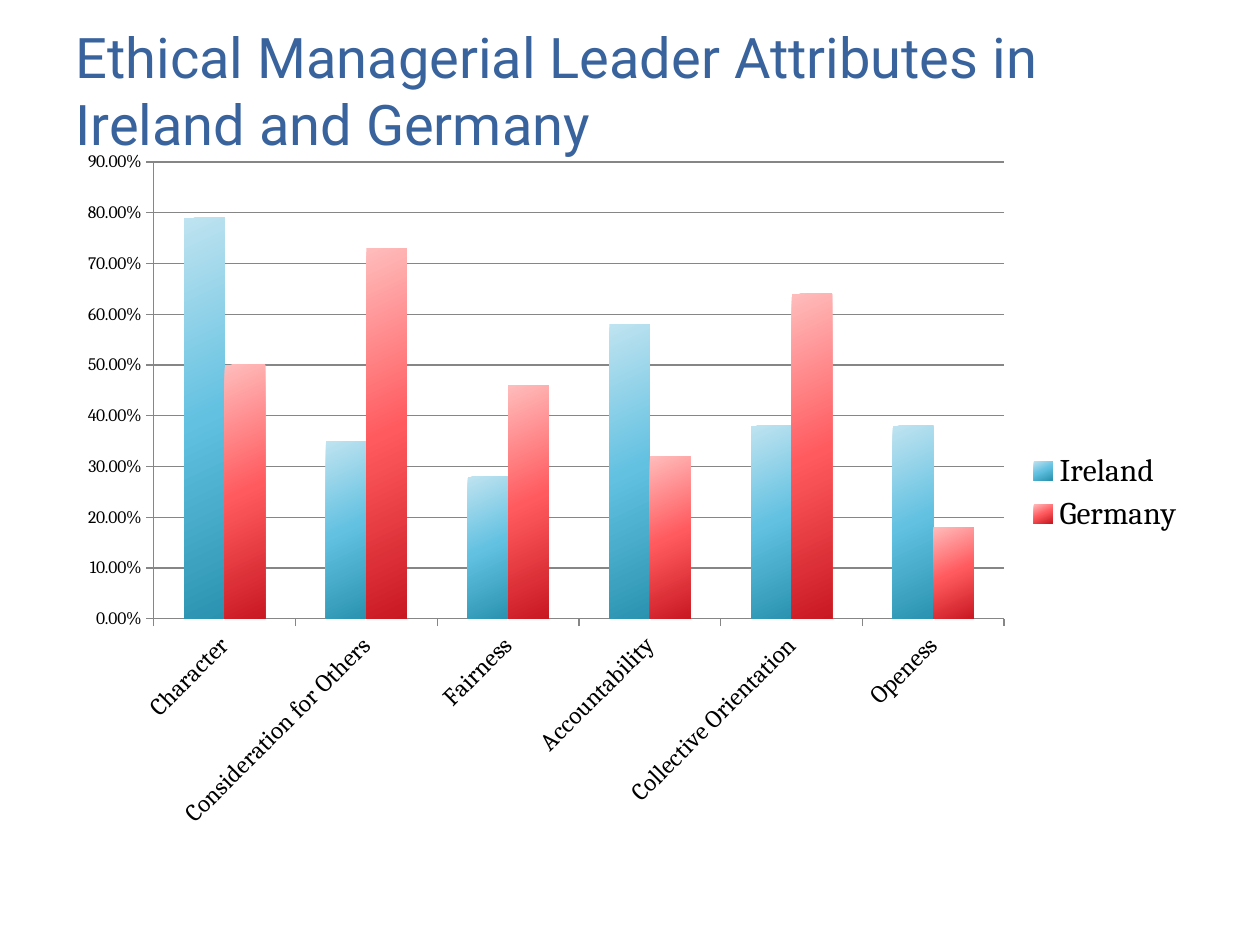
import pptx
import pptx.chart.data
import pptx.dml.color
import pptx.enum.chart
import pptx.enum.text
import pptx.util
from lxml import etree
from pptx.oxml import parse_xml
from pptx.oxml.ns import nsdecls, qn

Cm, Pt = pptx.util.Cm, pptx.util.Pt
RGB = pptx.dml.color.RGBColor.from_string
enum = pptx.enum.chart

TITLE = "Ethical Managerial Leader Attributes in Ireland and Germany"
GROUPS = ["Character", "Consideration for Others", "Fairness",
          "Accountability", "Collective Orientation", "Openess"]
SERIES = {
    "Ireland": [0.79, 0.35, 0.28, 0.58, 0.38, 0.38],
    "Germany": [0.5, 0.73, 0.46, 0.32, 0.64, 0.18],
}
THEME = {
    "head": "Roboto", "body": "Cambria",
    "title": "39639D", "text": "000000", "line": "868686",
    "bars": {"Ireland": ("BFE3F0", "62C1E1", "2A93B0"),
             "Germany": ("FFBCBC", "FF5A5E", "C91922")},
    "size": {"title": 32, "base": 10, "group": 14, "legend": 18},
}
SIZE = THEME["size"]
LEFT, WIDTH = Cm(1.27), Cm(22.86)
PLOT = {"x": 0.08, "y": 0.03, "w": 0.75, "h": 0.65}


def style(font, size, color=THEME["text"], name=THEME["body"]):
    font.size = Pt(size)
    font.name = name
    font.color.rgb = RGB(color)


def shade(bar, colors):
    stops = "".join(
        f'<a:gs pos="{pos}"><a:srgbClr val="{color}"/></a:gs>'
        for pos, color in zip((0, 50000, 100000), colors))
    bar.format.fill.solid()
    props = bar.format.fill._xPr
    props.replace(props.find(qn("a:solidFill")), parse_xml(
        f'<a:gradFill {nsdecls("a")} rotWithShape="1"><a:gsLst>{stops}</a:gsLst>'
        '<a:lin ang="3900000" scaled="0"/></a:gradFill>'))


def place(chart):
    area = chart._chartSpace.chart.plotArea
    for old in area.findall(qn("c:layout")):
        area.remove(old)
    layout = etree.Element(qn("c:layout"))
    box = etree.SubElement(layout, qn("c:manualLayout"))
    modes = {"layoutTarget": "inner", "xMode": "edge", "yMode": "edge"}
    for tag, val in (modes | PLOT).items():
        etree.SubElement(box, qn(f"c:{tag}")).set("val", str(val))
    area.insert(0, layout)


def add_title(slide):
    title = slide.shapes.title
    title.left, title.top, title.width, title.height = LEFT, Cm(0.76), WIDTH, Cm(2.08)
    frame = title.text_frame
    frame.text = TITLE
    frame.word_wrap = True
    frame.auto_size = pptx.enum.text.MSO_AUTO_SIZE.NONE
    frame.vertical_anchor = pptx.enum.text.MSO_ANCHOR.MIDDLE
    para = frame.paragraphs[0]
    para.alignment = pptx.enum.text.PP_ALIGN.LEFT
    style(para.font, SIZE["title"], THEME["title"], THEME["head"])


def add_bars(slide):
    data = pptx.chart.data.CategoryChartData(number_format="0.00%")
    data.categories = GROUPS
    for name, vals in SERIES.items():
        data.add_series(name, vals)
    chart = slide.shapes.add_chart(
        enum.XL_CHART_TYPE.COLUMN_CLUSTERED, LEFT, Cm(2.84), WIDTH, Cm(14.17), data).chart
    style(chart.font, SIZE["base"])
    chart.has_title = False
    chart.has_legend = True
    chart.legend.position = enum.XL_LEGEND_POSITION.RIGHT
    chart.legend.include_in_layout = False
    style(chart.legend.font, SIZE["legend"])

    plot = chart.plots[0]
    plot.gap_width, plot.overlap = 150, 0
    plot.vary_by_categories = False
    for bar in plot.series:
        bar.invert_if_negative = False
        shade(bar, THEME["bars"][bar.name])

    cat, val = chart.category_axis, chart.value_axis
    for axis, size in ((cat, SIZE["group"]), (val, SIZE["base"])):
        style(axis.tick_labels.font, size)
        axis.major_tick_mark = enum.XL_TICK_MARK.OUTSIDE
        axis.format.line.color.rgb = RGB(THEME["line"])
    cat._element.find(qn("c:txPr")).find(qn("a:bodyPr")).set("rot", "-2700000")
    val.minimum_scale, val.maximum_scale, val.major_unit = 0, 0.9, 0.1
    val.tick_labels.number_format = "0.00%"
    val.tick_labels.number_format_is_linked = False
    val.has_major_gridlines = True
    val.major_gridlines.format.line.color.rgb = RGB(THEME["line"])
    place(chart)


def main():
    deck = pptx.Presentation()
    deck.slide_width, deck.slide_height = Cm(25.4), Cm(19.05)
    slide = deck.slides.add_slide(deck.slide_layouts[5])
    add_title(slide)
    add_bars(slide)
    deck.save("out.pptx")


if __name__ == "__main__":
    main()
